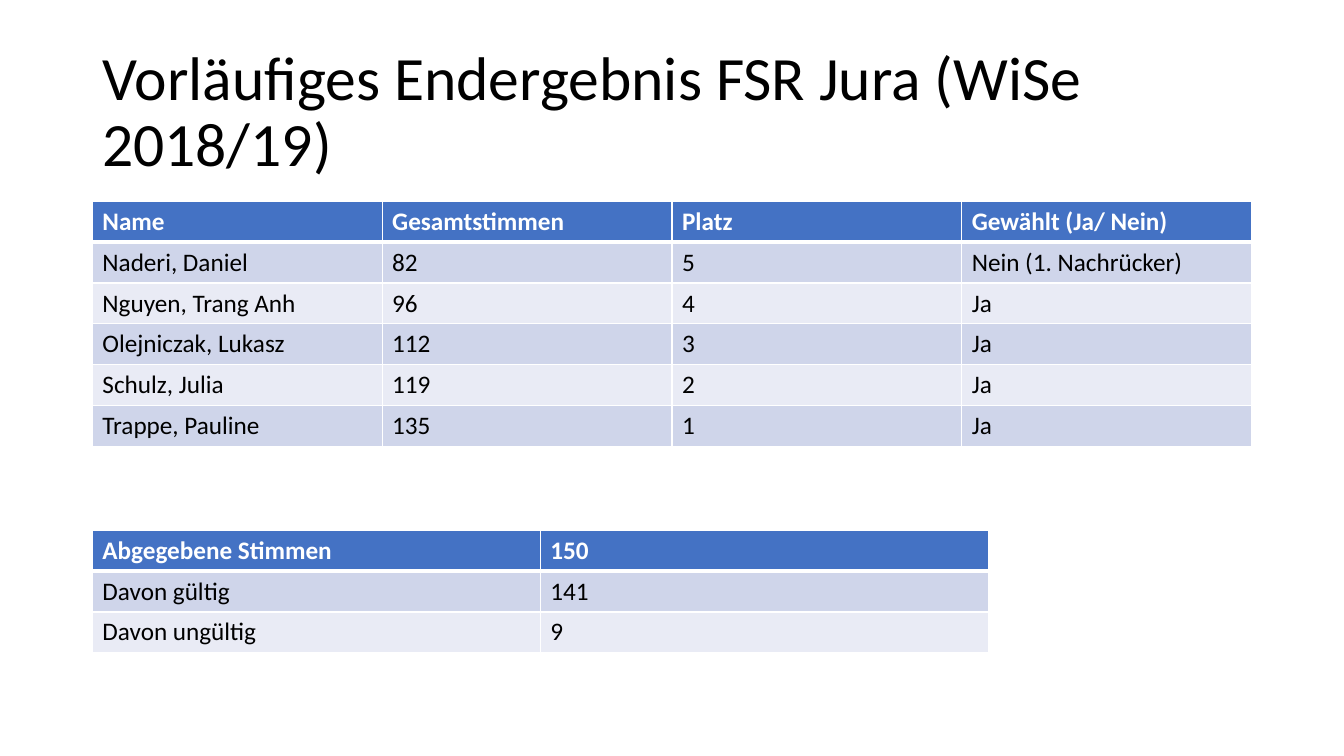
from lxml import etree
from pptx import Presentation
from pptx import util as u
from pptx.dml.color import RGBColor
from pptx.enum import text
from pptx.oxml import ns

LEFT = 66
CONTENT_WIDTH = 828
RESULTS = [
    ["Name", "Gesamtstimmen", "Platz", "Gewählt (Ja/ Nein)"],
    ["Naderi, Daniel", "82", "5", "Nein (1. Nachrücker)"],
    ["Nguyen, Trang Anh", "96", "4", "Ja"],
    ["Olejniczak, Lukasz", "112", "3", "Ja"],
    ["Schulz, Julia", "119", "2", "Ja"],
    ["Trappe, Pauline", "135", "1", "Ja"],
]
BALLOTS = [
    ["Abgegebene Stimmen", "150"],
    ["Davon gültig", "141"],
    ["Davon ungültig", "9"],
]


def color(hex_string):
    return RGBColor.from_string(hex_string)


def write(frame, content, *, font="Calibri", size=18, ink="000000", bold=False, spacing=1.0):
    para = frame.paragraphs[0]
    para.line_spacing = spacing
    span = para.add_run()
    span.text = content
    span.font.name = font
    span.font.size = u.Pt(size)
    span.font.bold = bold
    span.font.color.rgb = color(ink)


def add_border(cell, side, width, ink):
    """Draw one cell side: L, R, T or B. Call before the cell is filled."""
    properties = cell._tc.get_or_add_tcPr()
    line = etree.SubElement(properties, ns.qn(f"a:ln{side}"), w=str(u.Pt(width)))
    fill = etree.SubElement(line, ns.qn("a:solidFill"))
    etree.SubElement(fill, ns.qn("a:srgbClr"), val=ink)


class SlideBuilder:
    header_fill = "4472C4"
    band_fills = ["CFD5EA", "E9EBF5"]
    white = "FFFFFF"
    row_height = 29.2

    def __init__(self, slide):
        self.slide = slide

    def title(self, content, left, top, width, height):
        box = self.slide.shapes.add_textbox(u.Pt(left), u.Pt(top), u.Pt(width), u.Pt(height))
        box.text_frame.word_wrap = True
        box.text_frame.vertical_anchor = text.MSO_ANCHOR.MIDDLE
        write(box.text_frame, content, size=44, spacing=0.9)

    def table(self, rows, left, top, width):
        """Add a banded table with equal columns and a header row."""
        frame = self.slide.shapes.add_table(
            len(rows), len(rows[0]), u.Pt(left), u.Pt(top),
            u.Pt(width), u.Pt(self.row_height * len(rows)))
        for row_index, values in enumerate(rows):
            frame.table.rows[row_index].height = u.Pt(self.row_height)
            for column_index, value in enumerate(values):
                self.cell(frame.table.cell(row_index, column_index), value, row_index)

    def cell(self, cell, value, row_index):
        is_header = row_index == 0
        widths = {"L": 1, "R": 1, "T": 3 if row_index == 1 else 1, "B": 3 if is_header else 1}
        for side, width in widths.items():
            add_border(cell, side, width, self.white)
        cell.fill.solid()
        band = self.band_fills[(row_index - 1) % 2]
        cell.fill.fore_color.rgb = color(self.header_fill if is_header else band)
        write(cell.text_frame, value, ink=self.white if is_header else "000000", bold=is_header)


def main():
    deck = Presentation()
    deck.slide_width, deck.slide_height = u.Pt(960), u.Pt(540)
    page = SlideBuilder(deck.slides.add_slide(deck.slide_layouts[6]))
    page.title("Vorläufiges Endergebnis FSR Jura (WiSe 2018/19)", LEFT, 28.75, CONTENT_WIDTH, 104.4)
    page.table(RESULTS, LEFT, 143.75, CONTENT_WIDTH)
    page.table(BALLOTS, LEFT, 378.7, 640)
    deck.save("out.pptx")


if __name__ == "__main__":
    main()
